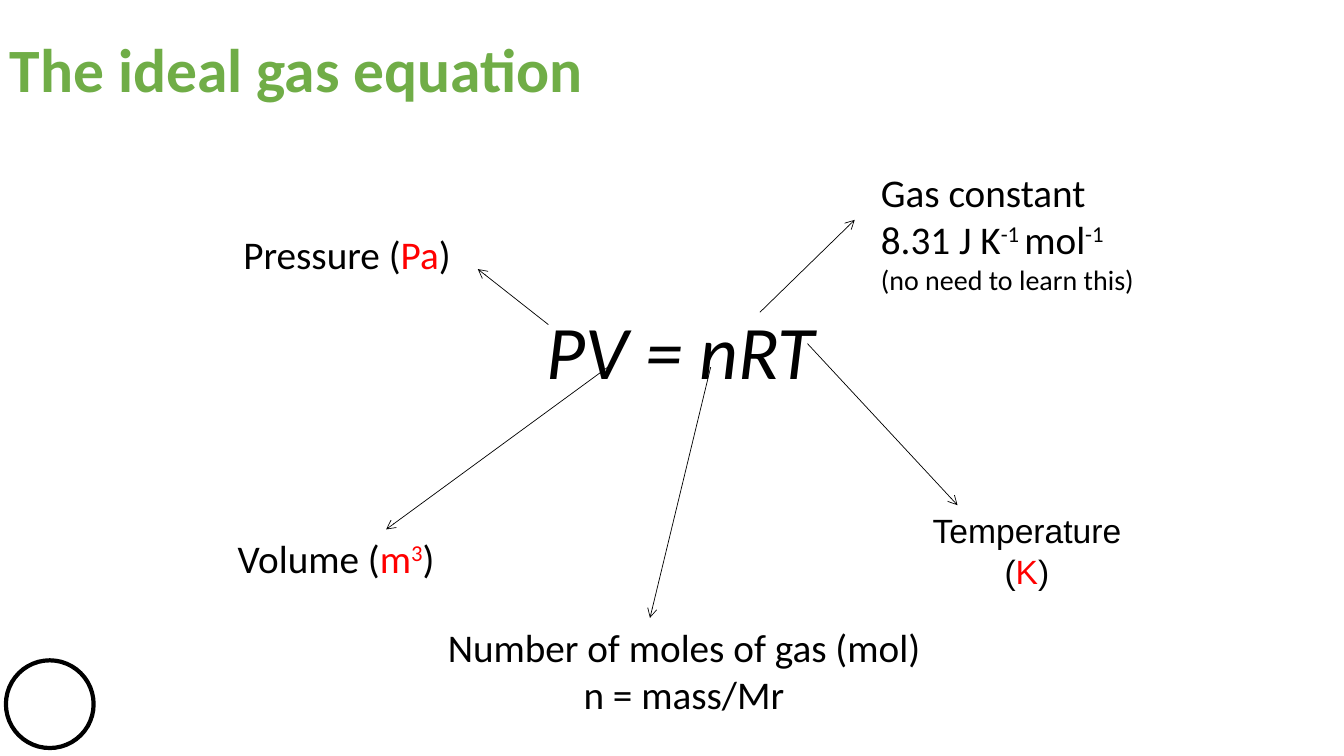
from lxml.etree import SubElement as Sub
from pptx import Presentation
from pptx.dml.color import RGBColor
from pptx.enum.shapes import MSO_CONNECTOR as Conn, MSO_SHAPE as Shape
from pptx.enum.text import MSO_ANCHOR as Anchor, PP_ALIGN as Align
from pptx.oxml.ns import qn
from pptx.util import Cm, Pt

BLACK = RGBColor(0, 0, 0)
WHITE = RGBColor(255, 255, 255)
RED = RGBColor(255, 0, 0)
GREEN = RGBColor(0x70, 0xAD, 0x47)

# Text formats
BODY = {"name": "Calibri", "size": Pt(28)}
NOTE = {"name": "Calibri", "size": Pt(20)}
ARIAL = {"name": "Arial", "size": Pt(24)}
TITLE = {"name": "Calibri", "size": Pt(44), "bold": True}
MATH = {"name": "Calibri", "size": Pt(54), "italic": True}

deck = Presentation()
deck.slide_width, deck.slide_height = Cm(33.87), Cm(19.05)
slide = deck.slides.add_slide(deck.slide_layouts[6])


def add_text(place, lines, align=Align.LEFT, gap=1.0):
    """Each line is (format, runs); each run is (words, colour, raised)."""
    box = slide.shapes.add_textbox(*map(Cm, place))
    frame = box.text_frame
    frame.word_wrap = True
    for i, (style, runs) in enumerate(lines):
        para = frame.paragraphs[0] if i == 0 else frame.add_paragraph()
        para.alignment = align
        para.line_spacing = gap
        for words, colour, raised in runs:
            run = para.add_run()
            run.text = words
            for key, value in style.items():
                setattr(run.font, key, value)
            run.font.color.rgb = colour
            if raised:
                run._r.get_or_add_rPr().set("baseline", "30000")
    return frame


# Corner ring
ring = slide.shapes.add_shape(Shape.OVAL, Cm(0.15), Cm(16.64), Cm(2.21), Cm(2.21))
ring.shadow.inherit = False
ring.fill.solid()
ring.fill.fore_color.rgb = WHITE
ring.line.color.rgb = BLACK
ring.line.width = Pt(3)

# Title and equation
title = add_text((0, 0, 29.21, 3.68),
                 [(TITLE, [("The ideal gas equation", GREEN, False)])], gap=0.9)
title.vertical_anchor = Anchor.MIDDLE
add_text((2.55, 7.8, 29.21, 2.4),
         [(MATH, [("PV = nRT", BLACK, False)])], Align.CENTER, 0.9)

# Arrows from each symbol to its meaning
arrows = [
    (20.35, 8.66, 24.13, 12.73),  # T
    (19.15, 7.87, 21.54, 5.54),   # R
    (17.91, 9.25, 16.38, 15.57),  # n
    (13.82, 8.18, 12.04, 6.78),   # P
    (15.32, 9.25, 9.73, 13.34),   # V
]
for ends in arrows:
    arrow = slide.shapes.add_connector(Conn.STRAIGHT, *map(Cm, ends))
    arrow.line.color.rgb = BLACK
    arrow.line.width = Pt(0.5)
    Sub(arrow.line._get_or_add_ln(), qn("a:tailEnd"), type="arrow")
    Sub(arrow._element.spPr, qn("a:effectLst"))

# Meanings and units
labels = [
    ((4.39, 5.69, 8.71, 1.45), Align.CENTER, [
        (BODY, [("Pressure (", BLACK, False), ("Pa", RED, False),
                (")", BLACK, False)])]),
    ((5.74, 13.34, 5.99, 1.45), Align.LEFT, [
        (BODY, [("Volume (", BLACK, False), ("m", RED, False),
                ("3", RED, True), (")", BLACK, False)])]),
    ((10.67, 15.57, 13.13, 2.64), Align.CENTER, [
        (BODY, [("Number of moles of gas (mol)", BLACK, False)]),
        (BODY, [("n = mass/Mr", BLACK, False)])]),
    ((21.95, 4.11, 7.39, 3.51), Align.LEFT, [
        (BODY, [("Gas constant", BLACK, False)]),
        (BODY, [("8.31 J K", BLACK, False), ("-1 ", BLACK, True),
                ("mol", BLACK, False), ("-1", BLACK, True)]),
        (NOTE, [("(no need to learn this)", BLACK, False)])]),
    ((22.83, 12.73, 6.1, 2.31), Align.CENTER, [
        (ARIAL, [("Temperature (", BLACK, False), ("K", RED, False),
                 (")", BLACK, False)])]),
]
for place, align, lines in labels:
    add_text(place, lines, align)

deck.save("out.pptx")
